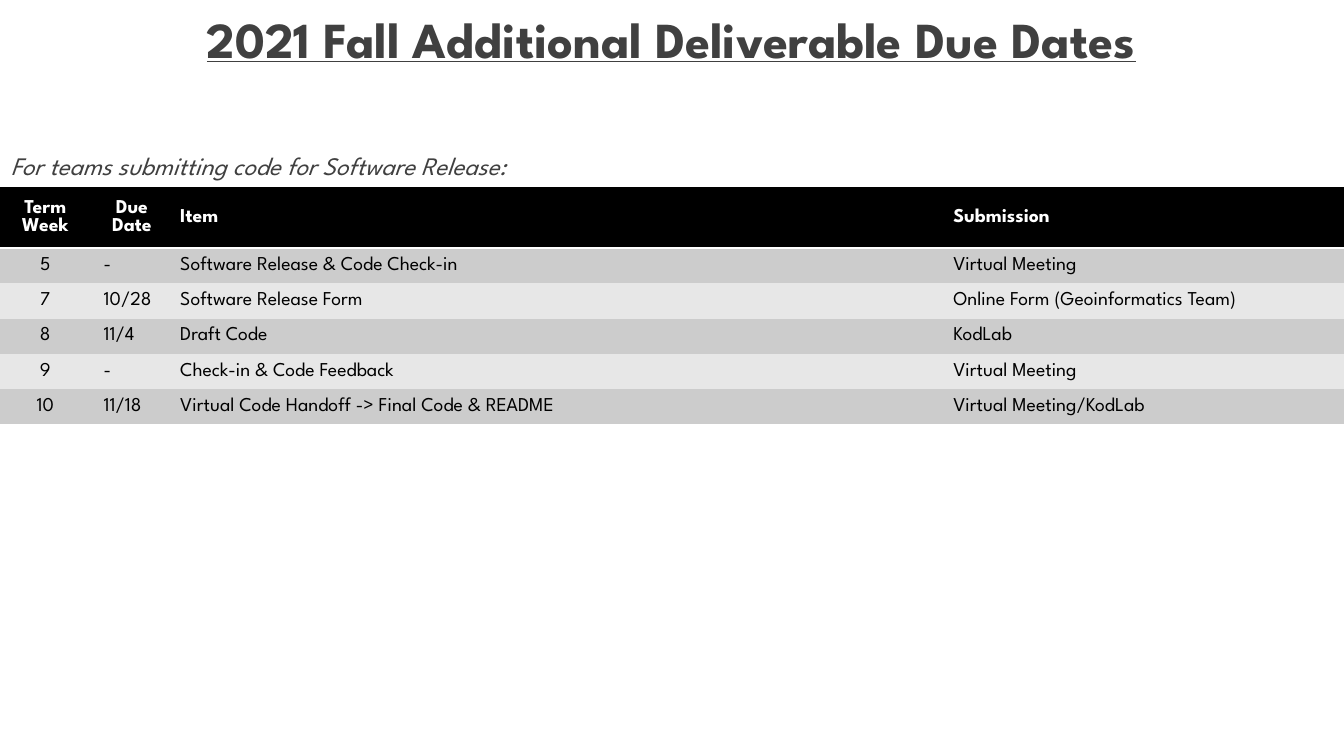
from dataclasses import dataclass

import lxml.etree
import pptx
import pptx.dml.color
import pptx.enum.text
import pptx.oxml.ns
import pptx.util

Pt = pptx.util.Pt
Align = pptx.enum.text.PP_ALIGN
Anchor = pptx.enum.text.MSO_ANCHOR


@dataclass(frozen=True)
class Theme:
    font: str = "League Spartan"
    heading: str = "404040"
    header_fill: str = "000000"
    header_text: str = "FFFFFF"
    body_text: str = "000000"
    bands: tuple = ("CCCCCC", "E7E7E7")
    title_size: int = 36
    subtitle_size: int = 18
    table_size: int = 14


THEME = Theme()
PLAIN_TABLE_STYLE = "{2D5ABB26-0587-4C30-8999-92F81FD0307C}"
COLUMN_WIDTHS = (69.1, 54.7, 552.2, 288)
COLUMN_ALIGNS = (Align.CENTER, Align.LEFT, Align.LEFT, Align.LEFT)
HEADER_ALIGNS = (Align.CENTER, Align.CENTER, Align.LEFT, Align.LEFT)
HEADER_HEIGHT = 43.2
ROW_HEIGHT = 25.2
HEADER = ("Term Week", "Due Date", "Item", "Submission")
DELIVERABLES = (
    ("5", "-", "Software Release & Code Check-in", "Virtual Meeting"),
    ("7", "10/28", "Software Release Form", "Online Form (Geoinformatics Team)"),
    ("8", "11/4", "Draft Code", "KodLab"),
    ("9", "-", "Check-in & Code Feedback", "Virtual Meeting"),
    ("10", "11/18", "Virtual Code Handoff -> Final Code & README", "Virtual Meeting/KodLab"),
)


def rgb(value):
    return pptx.dml.color.RGBColor.from_string(value)


def write(frame, text, size, color, align=Align.LEFT, bold=False, italic=False, underline=False):
    frame.text = text
    para = frame.paragraphs[0]
    para.alignment = align
    font = para.runs[0].font
    font.name = THEME.font
    font.size = Pt(size)
    font.color.rgb = rgb(color)
    font.bold = bold
    font.italic = italic
    font.underline = underline
    return para


def add_text(page, left, top, width, height, text, size, anchor=Anchor.TOP, **style):
    box = page.shapes.add_textbox(Pt(left), Pt(top), Pt(width), Pt(height))
    frame = box.text_frame
    frame.word_wrap = True
    frame.vertical_anchor = anchor
    return write(frame, text, size, THEME.heading, **style)


def add_border(cell, tag, color, width):
    line = lxml.etree.Element(pptx.oxml.ns.qn(tag), w=str(Pt(width)))
    fill = lxml.etree.SubElement(line, pptx.oxml.ns.qn("a:solidFill"))
    lxml.etree.SubElement(fill, pptx.oxml.ns.qn("a:srgbClr"), val=color)
    cell._tc.get_or_add_tcPr().insert(0, line)


def fill_row(table, index, texts, aligns, fill, color, bold=False):
    for cell, text, align in zip(table.rows[index].cells, texts, aligns):
        cell.fill.solid()
        cell.fill.fore_color.rgb = rgb(fill)
        cell.vertical_anchor = Anchor.MIDDLE
        write(cell.text_frame, text, THEME.table_size, color, align, bold)


def add_schedule(page, left, top):
    height = HEADER_HEIGHT + ROW_HEIGHT * len(DELIVERABLES)
    graphic = page.shapes.add_table(
        len(DELIVERABLES) + 1, len(HEADER), Pt(left), Pt(top), Pt(sum(COLUMN_WIDTHS)), Pt(height)
    )
    table = graphic.table
    table.horz_banding = False
    table._tbl.tblPr.find(pptx.oxml.ns.qn("a:tableStyleId")).text = PLAIN_TABLE_STYLE
    for column, width in zip(table.columns, COLUMN_WIDTHS):
        column.width = Pt(width)
    for index, row in enumerate(table.rows):
        row.height = Pt(ROW_HEIGHT if index else HEADER_HEIGHT)

    fill_row(table, 0, HEADER, HEADER_ALIGNS, THEME.header_fill, THEME.header_text, bold=True)
    for cell in table.rows[0].cells:
        add_border(cell, "a:lnB", THEME.header_text, 2)
    for index, texts in enumerate(DELIVERABLES):
        band = THEME.bands[index % len(THEME.bands)]
        fill_row(table, index + 1, texts, COLUMN_ALIGNS, band, THEME.body_text)


def main():
    deck = pptx.Presentation()
    deck.slide_width, deck.slide_height = Pt(960), Pt(540)
    page = deck.slides.add_slide(deck.slide_layouts[6])
    title = add_text(
        page, -2.9, 6.5, 964.8, 47.5, "2021 Fall Additional Deliverable Due Dates",
        THEME.title_size, Anchor.MIDDLE, align=Align.CENTER, bold=True, underline=True,
    )
    title.line_spacing = 0.9
    add_schedule(page, -2.2, 133.9)
    add_text(
        page, 0.7, 103.7, 515.5, 28.8, "For teams submitting code for Software Release:",
        THEME.subtitle_size, italic=True,
    )
    deck.save("out.pptx")


if __name__ == "__main__":
    main()
